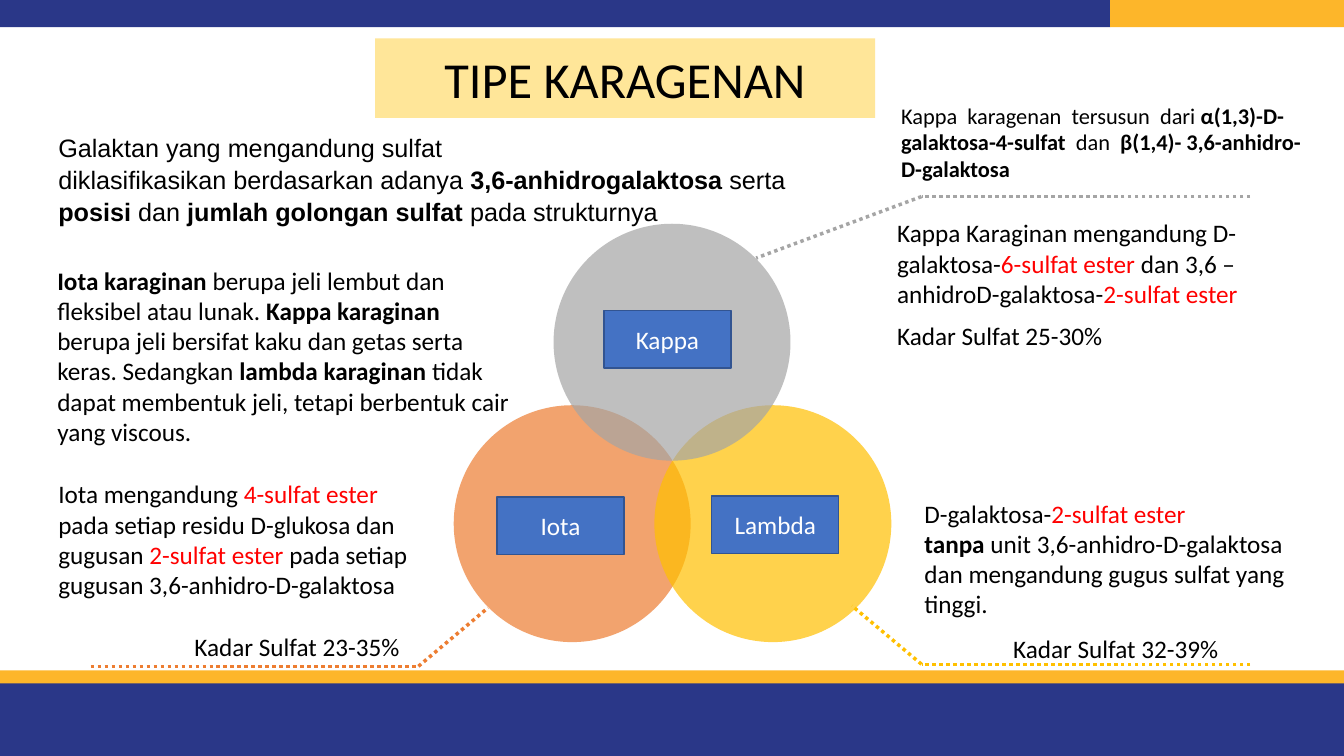
from lxml import etree
from pptx import Presentation
from pptx.dml.color import RGBColor
from pptx.enum import dml, shapes, text
from pptx.oxml import ns
from pptx.util import Inches, Pt

NAVY = RGBColor(0x2A, 0x37, 0x88)
AMBER = RGBColor(0xFD, 0xB6, 0x2A)
CREAM = RGBColor(0xFF, 0xE6, 0x99)
ORANGE = RGBColor(0xED, 0x7D, 0x31)
GOLD = RGBColor(0xFF, 0xC0, 0x00)
GRAY = RGBColor(0xA5, 0xA5, 0xA5)
BLUE = RGBColor(0x44, 0x72, 0xC4)
DARK_BLUE = RGBColor(0x32, 0x54, 0x91)
RED = RGBColor(0xFF, 0x00, 0x00)
BLACK = RGBColor(0x00, 0x00, 0x00)
WHITE = RGBColor(0xFF, 0xFF, 0xFF)

# Run styles
PLAIN, BOLD, ALERT = "plain", "bold", "alert"


def add_run(p, words, size=18, color=BLACK, bold=False, font="Calibri"):
    r = p.add_run()
    r.text = words
    r.font.name = font
    r.font.size = Pt(size)
    r.font.bold = bold
    r.font.color.rgb = color


def add_filled(slide, kind, box, color):
    sp = slide.shapes.add_shape(kind, *map(Inches, box))
    sp.shadow.inherit = False
    sp.fill.solid()
    sp.fill.fore_color.rgb = color
    sp.line.fill.background()
    return sp


def add_bar(slide, box, color):
    return add_filled(slide, shapes.MSO_SHAPE.RECTANGLE, box, color)


def add_circle(slide, left, top, color):
    sp = add_filled(slide, shapes.MSO_SHAPE.OVAL, (left, top, 2.35, 2.35), color)
    clr = sp.fill._xPr.find(".//" + ns.qn("a:srgbClr"))
    etree.SubElement(clr, ns.qn("a:alpha"), val="70000")


def add_label(slide, left, top, name):
    sp = add_bar(slide, (left, top, 1.26, 0.57), BLUE)
    sp.line.color.rgb = DARK_BLUE
    sp.line.width = Pt(1)
    tf = sp.text_frame
    tf.vertical_anchor = text.MSO_ANCHOR.MIDDLE
    p = tf.paragraphs[0]
    p.alignment = text.PP_ALIGN.CENTER
    add_run(p, name, color=WHITE)


def add_callout(slide, points, color):
    """Dotted line through the given points."""
    for start, end in zip(points, points[1:]):
        line = slide.shapes.add_connector(
            shapes.MSO_CONNECTOR.STRAIGHT, *map(Inches, start + end))
        line.line.color.rgb = color
        line.line.width = Pt(2.5)
        line.line.dash_style = dml.MSO_LINE.ROUND_DOT
        etree.SubElement(line._element.spPr, ns.qn("a:effectLst"))


def add_note(slide, box, paragraphs, size=18, font="Calibri", spacing=1.0):
    tf = slide.shapes.add_textbox(*map(Inches, box)).text_frame
    tf.word_wrap = True
    for i, runs in enumerate(paragraphs):
        p = tf.add_paragraph() if i else tf.paragraphs[0]
        p.line_spacing = spacing
        for words, style in runs:
            add_run(p, words, size, RED if style == ALERT else BLACK,
                    style == BOLD, font)


def set_title(slide, box, words):
    sp = slide.shapes.title
    sp.left, sp.top, sp.width, sp.height = map(Inches, box)
    sp.fill.solid()
    sp.fill.fore_color.rgb = CREAM
    tf = sp.text_frame
    tf.vertical_anchor = text.MSO_ANCHOR.MIDDLE
    p = tf.paragraphs[0]
    p.alignment = text.PP_ALIGN.CENTER
    add_run(p, words, 36)


def main():
    prs = Presentation()
    prs.slide_width, prs.slide_height = Inches(13.33), Inches(7.5)
    slide = prs.slides.add_slide(prs.slide_layouts[5])

    # Header and footer bands
    add_bar(slide, (0, 0, 11.01, 0.27), NAVY)
    add_bar(slide, (11.01, 0, 2.32, 0.27), AMBER)
    add_bar(slide, (0, 6.76, 13.33, 0.74), NAVY)
    add_bar(slide, (0, 6.65, 13.33, 0.13), AMBER)

    set_title(slide, (3.72, 0.38, 4.96, 0.79), "TIPE KARAGENAN")

    # Venn diagram with callout lines
    add_circle(slide, 4.5, 4.02, ORANGE)
    add_circle(slide, 6.49, 4.02, GOLD)
    add_circle(slide, 5.49, 2.22, GRAY)
    add_callout(slide, [(0.9, 6.61), (4.15, 6.61), (4.84, 6.03)], ORANGE)
    add_callout(slide, [(12.4, 1.95), (9.14, 1.95), (7.5, 2.56)], GRAY)
    add_callout(slide, [(12.4, 6.59), (9.14, 6.59), (8.45, 6.01)], GOLD)
    add_label(slide, 5.99, 3.08, "Kappa")
    add_label(slide, 4.93, 4.93, "Iota")
    add_label(slide, 7.06, 4.92, "Lambda")

    # Introduction
    add_note(slide, (0.48, 1.25, 8.15, 1.01), [
        [("Galaktan yang mengandung sulfat", PLAIN)],
        [("diklasifikasikan berdasarkan adanya ", PLAIN),
         ("3,6-anhidrogalaktosa ", BOLD), ("serta ", PLAIN),
         ("posisi", BOLD), (" dan ", PLAIN),
         ("jumlah golongan sulfat ", BOLD), ("pada strukturnya", PLAIN)],
    ], font="Arial", spacing=1.05)
    add_note(slide, (0.47, 2.58, 4.7, 1.92), [
        [("Iota karaginan ", BOLD),
         ("berupa jeli lembut dan fleksibel atau lunak. ", PLAIN),
         ("Kappa karaginan ", BOLD),
         ("berupa jeli bersifat kaku dan getas serta keras. Sedangkan ", PLAIN),
         ("lambda karaginan ", BOLD),
         ("tidak dapat membentuk jeli, tetapi berbentuk cair yang viscous.", PLAIN)],
    ])

    # Kappa
    add_note(slide, (8.84, 0.96, 4.27, 0.91), [
        [("Kappa  karagenan  tersusun  dari ", PLAIN),
         ("α(1,3)-D-galaktosa-4-sulfat ", BOLD), (" dan  ", PLAIN),
         ("β(1,4)- 3,6-anhidro-D-galaktosa", BOLD)],
    ], size=16)
    add_note(slide, (8.8, 2.11, 4.27, 1.01), [
        [("Kappa Karaginan mengandung D-galaktosa-", PLAIN),
         ("6-sulfat ester ", ALERT),
         ("dan 3,6 –anhidroD-galaktosa-", PLAIN), ("2-sulfat ester", ALERT)],
    ])

    # Iota
    add_note(slide, (0.48, 4.7, 3.67, 1.62), [
        [("Iota mengandung ", PLAIN), ("4-sulfat ester ", ALERT),
         ("pada setiap residu D-glukosa dan gugusan ", PLAIN),
         ("2-sulfat ester ", ALERT),
         ("pada setiap gugusan 3,6-anhidro-D-galaktosa", PLAIN)],
    ])

    # Lambda
    add_note(slide, (9.07, 4.89, 4.06, 1.62), [
        [("D-galaktosa-", PLAIN), ("2-sulfat ester", ALERT)],
        [("tanpa", BOLD),
         (" unit 3,6-anhidro-D-galaktosa dan mengandung gugus sulfat yang tinggi.",
          PLAIN)],
    ])

    # Sulfate content of each type
    for left, top, share in [(8.8, 3.13, "25-30%"), (1.83, 6.21, "23-35%"),
                             (9.95, 6.23, "32-39%")]:
        add_note(slide, (left, top, 3.67, 0.4),
                 [[("Kadar Sulfat " + share, PLAIN)]])

    prs.save("out.pptx")


if __name__ == "__main__":
    main()
